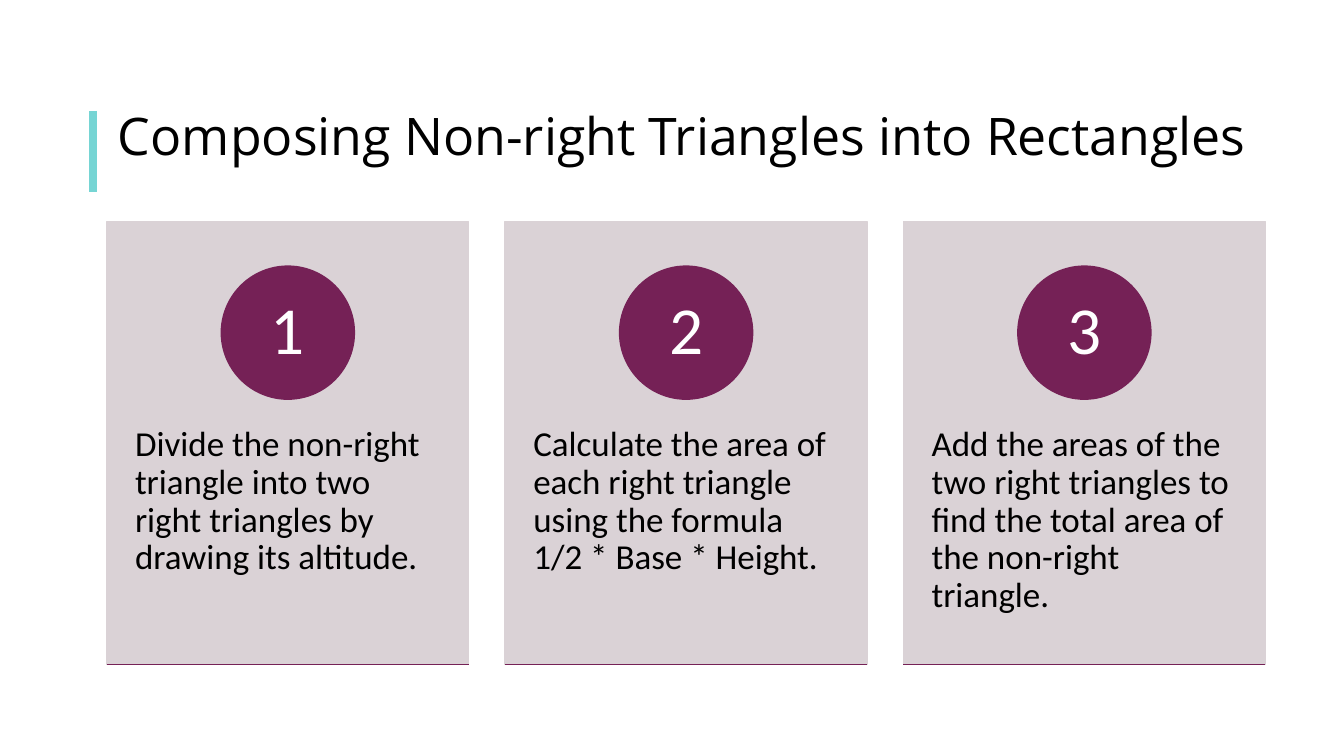
from lxml import etree
from pptx import Presentation
from pptx.dml.color import RGBColor
from pptx.enum.shapes import MSO_CONNECTOR as Connector, MSO_SHAPE as Shape
from pptx.enum.text import MSO_ANCHOR as Anchor, PP_ALIGN as Align
from pptx.oxml.ns import qn
from pptx.util import Inches, Pt

# Content
TITLE = "Composing Non-right Triangles into Rectangles"
STEPS = [
    "Divide the non-right triangle into two right triangles by drawing its altitude.",
    "Calculate the area of each right triangle using the formula 1/2 * Base * Height.",
    "Add the areas of the two right triangles to find the total area of the non-right triangle.",
]
BLACK, WHITE = "000000", "FFFFFF"
PLUM, MAUVE, TEAL = "752156", "DAD2D6", "76D5D4"

# Layout in inches
CARD_LEFT, CARD_TOP, CARD_WIDTH, CARD_HEIGHT = 1.06, 2.2, 3.59, 4.39
CARD_STEP = 3.95
CIRCLE_TOP, CIRCLE_SIZE = 2.64, 1.32
TEXT_TOP, TEXT_HEIGHT = 3.87, 2.63


def color(value):
    return RGBColor.from_string(value)


def add_filled(kind, left, top, width, height, fill):
    shape = slide.shapes.add_shape(
        kind, Inches(left), Inches(top), Inches(width), Inches(height))
    shape.shadow.inherit = False
    shape.fill.solid()
    shape.fill.fore_color.rgb = color(fill)
    shape.line.color.rgb = color(fill)
    shape.line.width = Pt(1)
    return shape


def add_line(x1, y1, x2, y2, stroke, width):
    line = slide.shapes.add_connector(
        Connector.STRAIGHT, Inches(x1), Inches(y1), Inches(x2), Inches(y2))
    line.line.color.rgb = color(stroke)
    line.line.width = Pt(width)
    etree.SubElement(line._element.spPr, qn("a:effectLst"))


def write(shape, text, font, size, fill, align, anchor, inset_x, inset_y):
    frame = shape.text_frame
    frame.word_wrap = True
    frame.vertical_anchor = anchor
    frame.margin_left = frame.margin_right = Inches(inset_x)
    frame.margin_top = frame.margin_bottom = Inches(inset_y)
    frame.text = text
    paragraph = frame.paragraphs[0]
    paragraph.alignment = align
    paragraph.line_spacing = 0.9
    paragraph.font.name = font
    paragraph.font.size = Pt(size)
    paragraph.font.color.rgb = color(fill)


presentation = Presentation()
presentation.slide_width, presentation.slide_height = Inches(13.33), Inches(7.5)
slide = presentation.slides.add_slide(presentation.slide_layouts[5])

# Title with accent bar
add_line(0.92, 1.1, 0.92, 1.9, TEAL, 6)
title = slide.shapes.title
title.left, title.top = Inches(1.07), Inches(1.1)
title.width, title.height = Inches(11.5), Inches(0.8)
write(title, TITLE, "Open Sans", 37, BLACK, Align.LEFT, Anchor.TOP, 0.1, 0)

# Numbered step cards
for index, step in enumerate(STEPS):
    left = CARD_LEFT + index * CARD_STEP
    bottom = CARD_TOP + CARD_HEIGHT
    add_filled(Shape.RECTANGLE, left, CARD_TOP, CARD_WIDTH, CARD_HEIGHT, MAUVE)

    description = slide.shapes.add_textbox(
        Inches(left), Inches(TEXT_TOP), Inches(CARD_WIDTH), Inches(TEXT_HEIGHT))
    write(description, step, "Calibri", 25, BLACK, Align.LEFT, Anchor.TOP, 0.28, 0.36)

    circle_left = left + (CARD_WIDTH - CIRCLE_SIZE) / 2
    circle = add_filled(
        Shape.OVAL, circle_left, CIRCLE_TOP, CIRCLE_SIZE, CIRCLE_SIZE, PLUM)
    write(circle, str(index + 1), "Calibri", 48, WHITE, Align.CENTER, Anchor.MIDDLE, 0.1, 0.01)

    add_line(left, bottom, left + CARD_WIDTH, bottom, PLUM, 1)

presentation.save("out.pptx")
